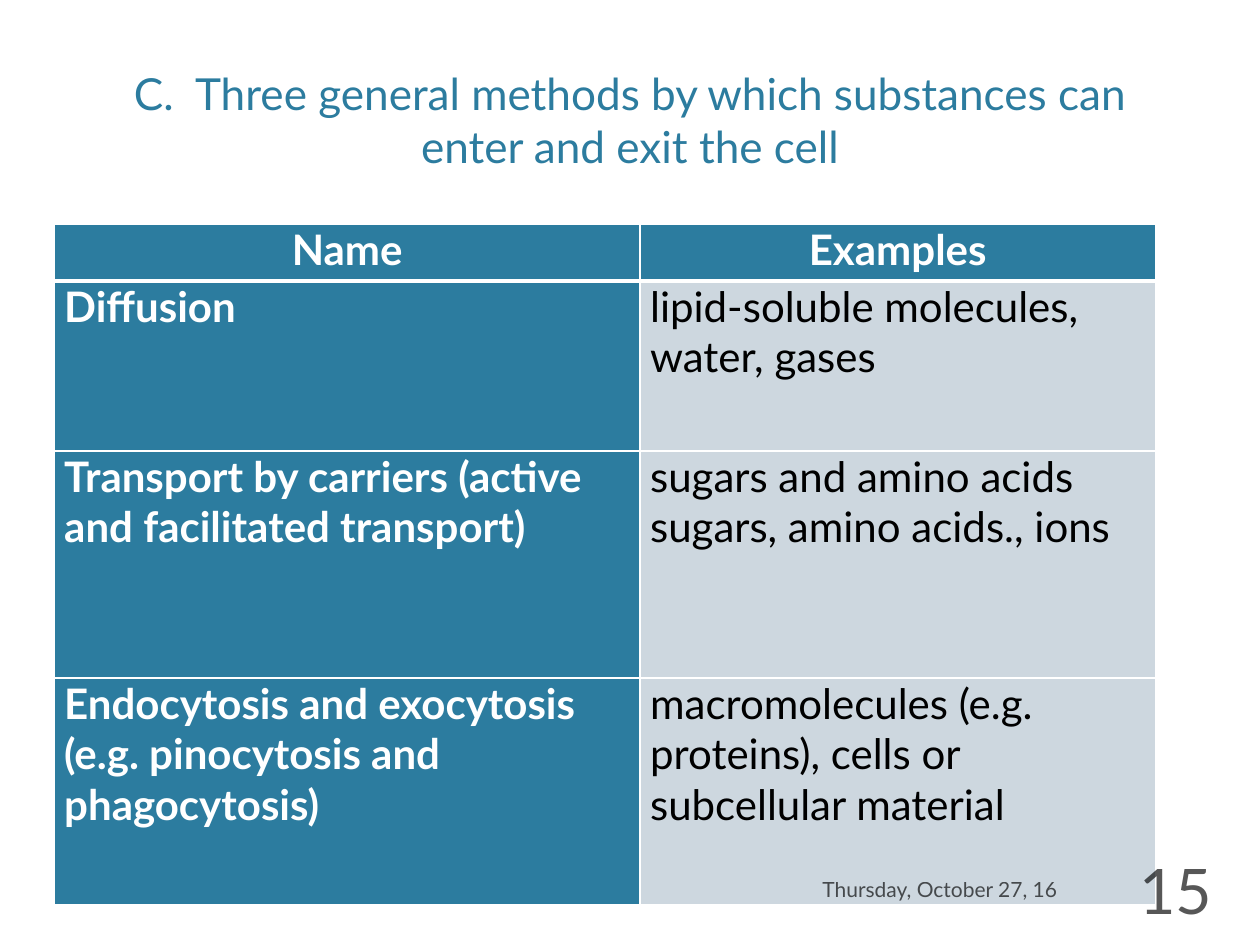
from lxml import etree
from pptx import Presentation
from pptx import util as u
from pptx.dml import color
from pptx.enum import text
from pptx.oxml import ns

FONT = "Lato"
TEAL, PALE, WHITE, BLACK = "2C7C9F", "CDD7DF", "FFFFFF", "000000"
ROWS = [
    ("Name", ["Examples"]),
    ("Diffusion", ["lipid-soluble molecules, water, gases"]),
    ("Transport by carriers (active and facilitated transport)",
     ["sugars and amino acids", "sugars, amino acids., ions"]),
    ("Endocytosis and exocytosis (e.g. pinocytosis and phagocytosis)",
     ["macromolecules (e.g. proteins), cells or subcellular material"]),
]


def rgb(value):
    return color.RGBColor.from_string(value)


def add_run(para, words, size, tint, bold=False):
    span = para.add_run()
    span.text = words
    span.font.name = FONT
    span.font.size = u.Pt(size)
    span.font.bold = bold
    span.font.color.rgb = rgb(tint)
    return span


def set_opacity(span, percent):
    fill = span.font.fill._xPr.find(".//" + ns.qn("a:srgbClr"))
    etree.SubElement(fill, ns.qn("a:alpha"), val=str(percent * 1000))


def place(shape, box):
    shape.left, shape.top, shape.width, shape.height = map(u.Inches, box)


def set_borders(cell, widths):
    props = cell._tc.get_or_add_tcPr()
    for index, (side, width) in enumerate(zip("LRTB", widths)):
        line = etree.Element(ns.qn(f"a:ln{side}"), w=str(u.Pt(width)))
        fill = etree.SubElement(line, ns.qn("a:solidFill"))
        etree.SubElement(fill, ns.qn("a:srgbClr"), val=WHITE)
        props.insert(index, line)


def add_title(page, box):
    title = page.shapes.title
    place(title, box)
    frame = title.text_frame
    frame.word_wrap = True
    frame.auto_size = text.MSO_AUTO_SIZE.NONE
    frame.vertical_anchor = text.MSO_ANCHOR.BOTTOM
    frame.margin_bottom = u.Inches(0.21)
    para = frame.paragraphs[0]
    para.alignment = text.PP_ALIGN.CENTER
    add_run(para, "C.  Three general methods by which substances can enter and exit the cell",
            25.2, TEAL)


def fill_cell(cell, lines, header, emphasis):
    cell.margin_left = cell.margin_right = u.Inches(0.08)
    cell.margin_top = cell.margin_bottom = 0
    cell.fill.solid()
    cell.fill.fore_color.rgb = rgb(TEAL if emphasis else PALE)
    frame = cell.text_frame
    for index, words in enumerate(lines):
        para = frame.add_paragraph() if index else frame.paragraphs[0]
        para.alignment = text.PP_ALIGN.CENTER if header else text.PP_ALIGN.LEFT
        add_run(para, words, 24, WHITE if emphasis else BLACK, emphasis)


def add_methods_table(page, box):
    table = page.shapes.add_table(len(ROWS), 2, *map(u.Inches, box)).table
    for column, width in zip(table.columns, (4.65, 4.09)):
        column.width = u.Inches(width)
    for row, height in zip(table.rows, (0.45, 1.35, 1.8, 1.8)):
        row.height = u.Inches(height)
    for r, (name, examples) in enumerate(ROWS):
        for c, lines in enumerate(([name], examples)):
            cell = table.cell(r, c)
            fill_cell(cell, lines, r == 0, r == 0 or c == 0)
            set_borders(cell, (1, 1, 3 if r == 1 else 1, 3 if r == 0 else 1))


def add_footer(page, box, words, size):
    frame = page.shapes.add_textbox(*map(u.Inches, box)).text_frame
    frame.word_wrap = True
    frame.vertical_anchor = text.MSO_ANCHOR.MIDDLE
    para = frame.paragraphs[0]
    para.alignment = text.PP_ALIGN.RIGHT
    set_opacity(add_run(para, words, size, BLACK), 65)


def main():
    deck = Presentation()
    deck.slide_width, deck.slide_height = u.Inches(10), u.Inches(7.5)
    page = deck.slides.add_slide(deck.slide_layouts[5])
    add_title(page, (0.6, 0.12, 8.8, 1.46))
    add_methods_table(page, (0.43, 1.78, 8.74, 5.4))
    add_footer(page, (6.16, 6.86, 2.33, 0.4), "Thursday, October 27, 16", 12)
    add_footer(page, (8.64, 6.86, 1.08, 0.4), "15", 36)
    deck.save("out.pptx")


if __name__ == "__main__":
    main()
